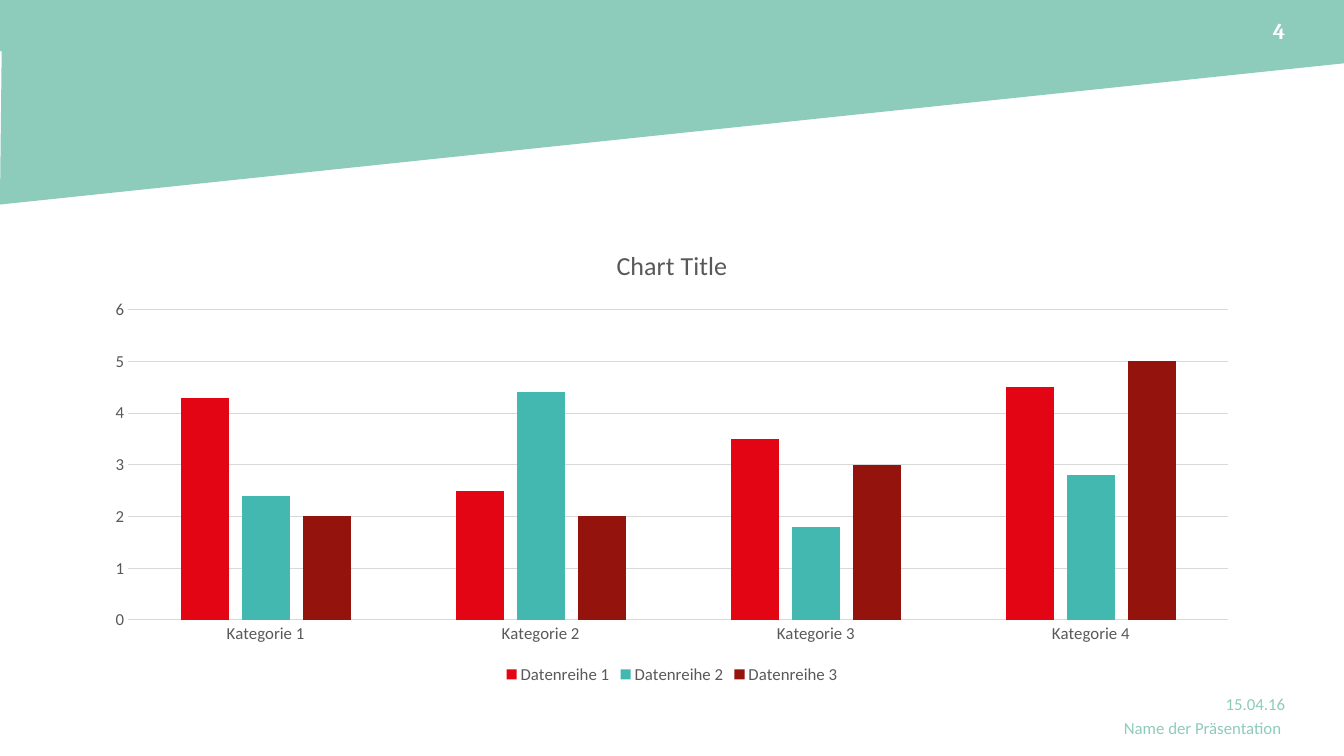
from pptx import Presentation
from pptx.chart.data import CategoryChartData
from pptx.dml.color import RGBColor
from pptx.enum import chart as ch, shapes, text
from pptx.util import Pt

MINT = RGBColor(0x8D, 0xCB, 0xBB)
WHITE = RGBColor(0xFF, 0xFF, 0xFF)
GREY = RGBColor(0x59, 0x59, 0x59)
RULE = RGBColor(0xD9, 0xD9, 0xD9)
RED = RGBColor(0xE3, 0x05, 0x13)
TEAL = RGBColor(0x42, 0xB8, 0xB0)
MAROON = RGBColor(0x94, 0x14, 0x0D)

W, H = 960, 540
CATEGORIES = [f"Kategorie {n}" for n in range(1, 5)]
SERIES = [
    ("Datenreihe 1", (4.3, 2.5, 3.5, 4.5), RED),
    ("Datenreihe 2", (2.4, 4.4, 1.8, 2.8), TEAL),
    ("Datenreihe 3", (2, 2, 3, 5), MAROON),
]


def set_font(font, color, **values):
    for name, value in values.items():
        setattr(font, name, value)
    font.color.rgb = color


def paint(sp, color):
    sp.shadow.inherit = False
    sp.fill.solid()
    sp.fill.fore_color.rgb = color
    sp.line.fill.background()


def add_banner(s, x, y, w, h):
    """Mint band whose lower edge rises from left to right."""
    bar = s.shapes.add_shape(shapes.MSO_SHAPE.RECTANGLE, Pt(x), Pt(y), Pt(w), Pt(38))
    paint(bar, MINT)
    top = y + 16.5
    fb = s.shapes.build_freeform(Pt(x + w), Pt(y + 46.5))
    fb.add_line_segments([(Pt(x + w), Pt(top)), (Pt(x + 1.5), Pt(top)),
                          (Pt(x), Pt(y + h))], close=True)
    paint(fb.convert_to_shape(), MINT)


def add_bar_chart(s, x, y, w, h):
    data = CategoryChartData()
    data.categories = CATEGORIES
    for name, values, _ in SERIES:
        data.add_series(name, values)
    chart = s.shapes.add_chart(ch.XL_CHART_TYPE.COLUMN_CLUSTERED,
                               Pt(x), Pt(y), Pt(w), Pt(h), data).chart
    set_font(chart.font, GREY, name="Calibri", size=Pt(12))

    chart.has_title = True
    tf = chart.chart_title.text_frame
    tf.text = "Chart Title"
    set_font(tf.paragraphs[0].runs[0].font, GREY,
             name="Calibri", size=Pt(18.6), bold=False)
    chart.chart_title.include_in_layout = False

    chart.has_legend = True
    chart.legend.position = ch.XL_LEGEND_POSITION.BOTTOM
    chart.legend.include_in_layout = False

    plot = chart.plots[0]
    plot.gap_width, plot.overlap, plot.vary_by_categories = 219, -27, False
    for series, (_, _, color) in zip(plot.series, SERIES):
        series.format.fill.solid()
        series.format.fill.fore_color.rgb = color
        series.invert_if_negative = False

    cat, val = chart.category_axis, chart.value_axis
    for axis in (cat, val):
        axis.major_tick_mark = axis.minor_tick_mark = ch.XL_TICK_MARK.NONE
        set_font(axis.tick_labels.font, GREY, name="Calibri", size=Pt(12))
    val.minimum_scale, val.maximum_scale, val.major_unit = 0, 6, 1
    val.format.line.fill.background()
    val.has_major_gridlines = True
    for line in (cat.format.line, val.major_gridlines.format.line):
        line.color.rgb = RULE
        line.width = Pt(0.75)


def add_label(s, x, y, w, h, words, color, anchor=text.MSO_ANCHOR.TOP, **font):
    tf = s.shapes.add_textbox(Pt(x), Pt(y), Pt(w), Pt(h)).text_frame
    frame = {"word_wrap": True, "vertical_anchor": anchor, "margin_left": Pt(7.2),
             "margin_right": 0, "margin_top": Pt(3.6), "margin_bottom": Pt(3.6)}
    for name, value in frame.items():
        setattr(tf, name, value)
    p = tf.paragraphs[0]
    p.alignment = text.PP_ALIGN.RIGHT
    r = p.add_run()
    r.text = words
    set_font(r.font, color, **font)


def add_footer(s, right, y):
    font = {"name": "Calibri", "size": Pt(12)}
    add_label(s, right - 216, y, 216, 28.8, "15.04.16", MINT, **font)
    add_label(s, right - 268.5, y + 17.3, 268.5, 30.9, "Name der Präsentation ", MINT, **font)


def build_chart_slide(prs):
    s = prs.slides.add_slide(prs.slide_layouts[6])
    right = W - 42
    add_banner(s, 0, -1.4, W + 1, 147.5)
    add_bar_chart(s, 66, 162.7, 828, 329)
    add_footer(s, right, 491.8)
    add_label(s, right - 239, 7.2, 239, 28.8, "4", WHITE, text.MSO_ANCHOR.MIDDLE,
              name="Cambria", size=Pt(16), bold=True)


def main():
    prs = Presentation()
    prs.slide_width, prs.slide_height = Pt(W), Pt(H)
    build_chart_slide(prs)
    prs.save("out.pptx")


if __name__ == "__main__":
    main()
